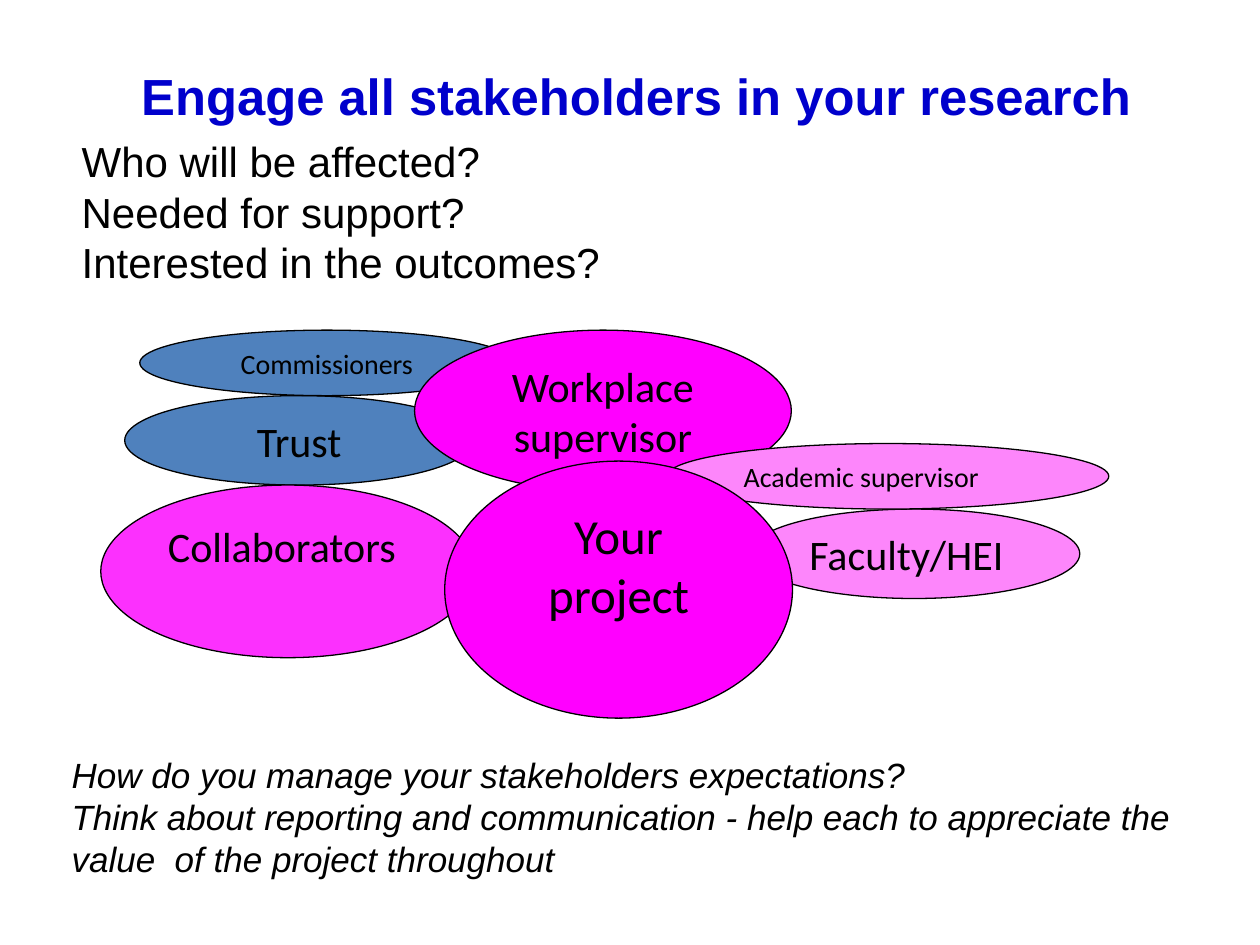
import pptx
import pptx.util
import pptx.dml.color
import pptx.enum.shapes
import pptx.enum.text

Inches = pptx.util.Inches
Pt = pptx.util.Pt
ALIGN = pptx.enum.text.PP_ALIGN
ANCHOR = pptx.enum.text.MSO_ANCHOR

COLORS = {
    "title": "0000CC",
    "black": "000000",
    "blue": "4F81BD",
    "pink": "FD86FB",
    "rose": "FC30FE",
    "magenta": "FF00FF",
}


def color(name):
    return pptx.dml.color.RGBColor.from_string(COLORS[name])


def write(frame, text, size, font="Arial", ink="black", bold=False,
          italic=False, align=ALIGN.LEFT, anchor=ANCHOR.TOP, wrap=True,
          bottom=0.05):
    """Fill a text frame, one paragraph for each line of text."""
    frame.word_wrap = wrap
    frame.auto_size = pptx.enum.text.MSO_AUTO_SIZE.NONE
    frame.vertical_anchor = anchor
    frame.margin_left = frame.margin_right = Inches(0.1)
    frame.margin_top = Inches(0.05)
    frame.margin_bottom = Inches(bottom)
    for i, line in enumerate(text.split("\n")):
        par = frame.paragraphs[0] if i == 0 else frame.add_paragraph()
        par.alignment = align
        run = par.add_run()
        run.text = line
        run.font.name = font
        run.font.size = Pt(size)
        run.font.bold = bold
        run.font.italic = italic
        run.font.color.rgb = color(ink)


class Page:
    """Holds the slide and the style shared by its elements."""

    font = "Calibri"
    edge = 0.75

    def __init__(self, deck):
        self.slide = deck.slides.add_slide(deck.slide_layouts[5])

    def title(self, text, box):
        shape = self.slide.shapes.title
        shape.left, shape.top, shape.width, shape.height = map(Inches, box)
        write(shape.text_frame, text, 29, ink="title", bold=True,
              align=ALIGN.CENTER, anchor=ANCHOR.MIDDLE)

    def note(self, text, box, size, **style):
        shape = self.slide.shapes.add_textbox(*map(Inches, box))
        write(shape.text_frame, text, size, **style)

    def oval(self, text, box, fill, size=24, **style):
        shape = self.slide.shapes.add_shape(
            pptx.enum.shapes.MSO_SHAPE.OVAL, *map(Inches, box))
        shape.shadow.inherit = False
        shape.fill.solid()
        shape.fill.fore_color.rgb = color(fill)
        shape.line.color.rgb = color("black")
        shape.line.width = Pt(self.edge)
        write(shape.text_frame, text, size, font=self.font,
              anchor=ANCHOR.MIDDLE, **style)


def main():
    deck = pptx.Presentation()
    deck.slide_width = Inches(10)
    deck.slide_height = Inches(7.5)
    page = Page(deck)
    mid = ALIGN.CENTER

    page.title("Engage all stakeholders in your research",
               (0.31, 0.32, 9.49, 0.87))
    page.oval("Trust", (0.99, 3.14, 2.77, 0.71), "blue", align=mid)
    page.oval("Faculty/HEI", (5.94, 4.04, 2.63, 0.71), "pink")
    page.oval("Collaborators", (0.8, 3.85, 2.97, 1.37), "rose", bottom=0.45)
    page.oval("Commissioners", (1.11, 2.62, 2.97, 0.52), "blue", size=16,
              align=mid)
    page.note("How do you manage your stakeholders expectations?\n"
              "Think about reporting and communication - help each to "
              "appreciate the value  of the project throughout",
              (0.47, 5.93, 9.53, 1.11), 20, italic=True)
    page.note("Who will be affected?\nNeeded for support?\n"
              "Interested in the outcomes?",
              (0.55, 1.03, 4.36, 1.31), 24, wrap=False)
    page.oval("Workplace supervisor", (3.29, 2.62, 2.99, 1.28), "magenta",
              align=mid)
    page.oval("Academic supervisor", (5.29, 3.52, 3.51, 0.52), "pink",
              size=16)
    page.oval("Your project", (3.53, 3.66, 2.76, 2.04), "magenta", size=28,
              align=mid, bottom=0.45)

    deck.save("out.pptx")


if __name__ == "__main__":
    main()
